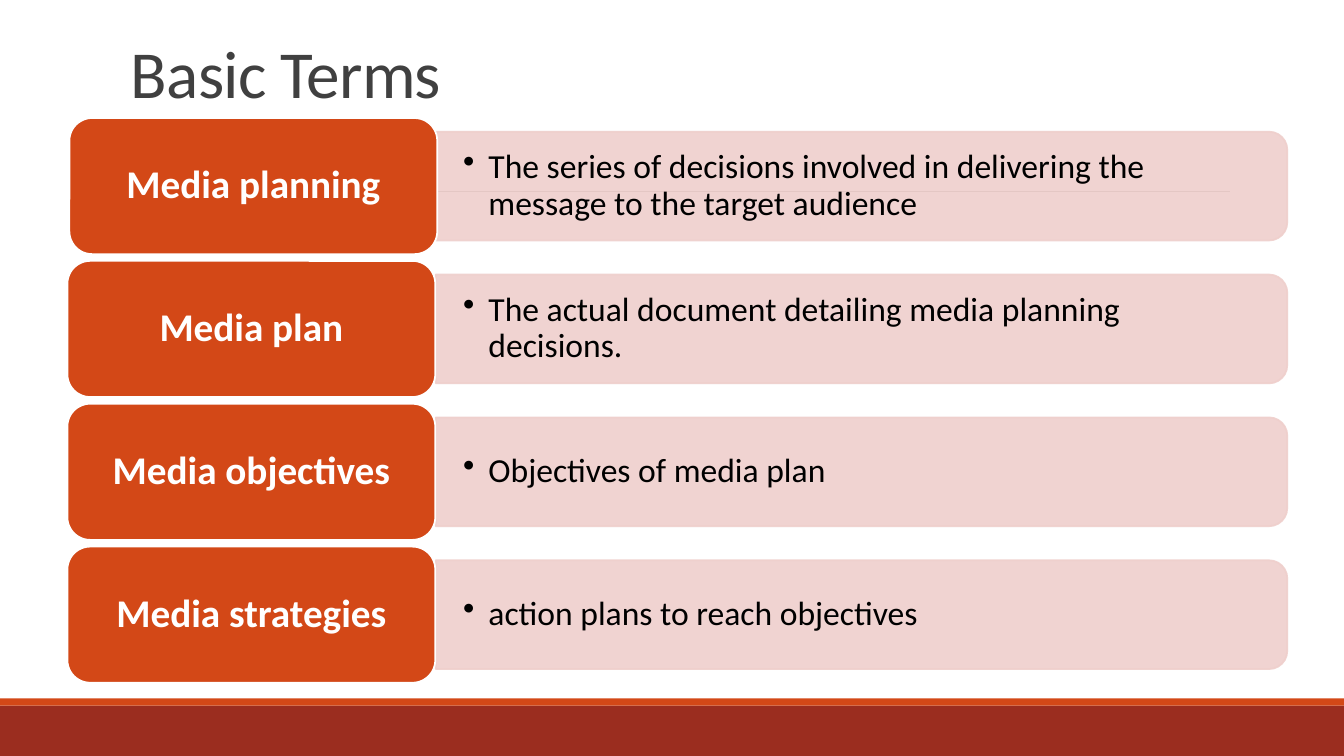
from pptx import Presentation
from pptx.dml.color import RGBColor
from pptx.enum import shapes, text
from pptx.oxml.ns import qn
from pptx.util import Cm, Pt
from lxml import etree

# Content
TITLE = "Basic Terms"
TERMS = [
    ("Media planning", "The series of decisions involved in delivering the message to the target audience"),
    ("Media plan", "The actual document detailing media planning decisions."),
    ("Media objectives", "Objectives of media plan"),
    ("Media strategies", "action plans to reach objectives"),
]

# Style
FONT = "Calibri"
WHITE = RGBColor(0xFF, 0xFF, 0xFF)
BLACK = RGBColor(0, 0, 0)
GREY = RGBColor(0x80, 0x80, 0x80)
DARK_GREY = RGBColor(0x40, 0x40, 0x40)
ORANGE = RGBColor(0xD3, 0x48, 0x17)
BRICK = RGBColor(0x9B, 0x2D, 0x1F)
PINK = RGBColor(0xEF, 0xCF, 0xCC)

# Layout in centimetres
SLIDE_W, SLIDE_H = 33.87, 19.05
FIRST_MIDDLE, PITCH = 4.69, 3.6
LABEL_LEFT, LABEL_W, LABEL_H = 1.7, 9.27, 3.43
FIRST_LABEL_SHIFT = 0.05
BAR_LEFT, BAR_W, BAR_H = 10.98, 21.46, 2.74
MEANING_W, MEANING_H = 21.34, 2.46


def add_block(slide, preset, left, top, width, height, fill, line=None):
    block = slide.shapes.add_shape(preset, Cm(left), Cm(top), Cm(width), Cm(height))
    block.shadow.inherit = False
    block.fill.solid()
    block.fill.fore_color.rgb = fill
    if line is None:
        block.line.fill.background()
    else:
        block.line.color.rgb = line
        block.line.width = Pt(1.25)
    return block


def write(shape, words, size, color, spacing, anchor, margins=(0.25, 0.13), bold=False):
    frame = shape.text_frame
    frame.word_wrap = True
    frame.vertical_anchor = anchor
    frame.margin_left = frame.margin_right = Cm(margins[0])
    frame.margin_top = frame.margin_bottom = Cm(margins[1])
    paragraph = frame.paragraphs[0]
    paragraph.text = words
    paragraph.line_spacing = spacing
    font = paragraph.font
    font.name, font.size, font.bold = FONT, Pt(size), bold
    font.color.rgb = color
    return paragraph


def add_bullet(paragraph):
    props = paragraph._p.get_or_add_pPr()
    props.set("marL", str(Cm(0.64)))
    props.set("indent", str(-Cm(0.64)))
    bullet = etree.Element(qn("a:buChar"), char="•")
    props.find(qn("a:defRPr")).addprevious(bullet)


def make_translucent(bar):
    for color in bar._element.spPr.iter(qn("a:srgbClr")):
        etree.SubElement(color, qn("a:alpha"), val="90000")


def add_term(slide, row, term, meaning):
    middle = FIRST_MIDDLE + row * PITCH

    # Bar turned a quarter so that its rounded end faces right
    bar = add_block(slide, shapes.MSO_SHAPE.ROUND_2_SAME_RECTANGLE,
                    BAR_LEFT + (BAR_W - BAR_H) / 2, middle - BAR_W / 2,
                    BAR_H, BAR_W, PINK, PINK)
    bar.rotation = 90
    make_translucent(bar)

    definition = slide.shapes.add_textbox(Cm(BAR_LEFT), Cm(middle - MEANING_H / 2),
                                          Cm(MEANING_W), Cm(MEANING_H))
    add_bullet(write(definition, meaning, 24, BLACK, 0.9,
                     text.MSO_ANCHOR.MIDDLE, (0.69, 0.36)))

    left = LABEL_LEFT + (FIRST_LABEL_SHIFT if row == 0 else 0)
    label = add_block(slide, shapes.MSO_SHAPE.ROUNDED_RECTANGLE, left,
                      middle - LABEL_H / 2, LABEL_W, LABEL_H, ORANGE, WHITE)
    name = write(label, term, 28, WHITE, 0.9, text.MSO_ANCHOR.MIDDLE, (0.3, 0.15), True)
    name.alignment = text.PP_ALIGN.CENTER


def main():
    deck = Presentation()
    deck.slide_width, deck.slide_height = Cm(SLIDE_W), Cm(SLIDE_H)
    slide = deck.slides.add_slide(deck.slide_layouts[6])

    # Footer bands and rule
    rectangle = shapes.MSO_SHAPE.RECTANGLE
    add_block(slide, rectangle, 0, 17.78, SLIDE_W, 1.27, BRICK)
    add_block(slide, rectangle, 0, 17.6, SLIDE_W, 0.18, ORANGE)
    rule = slide.shapes.add_connector(shapes.MSO_CONNECTOR.STRAIGHT,
                                      Cm(3.33), Cm(4.83), Cm(31), Cm(4.83))
    rule.line.color.rgb = GREY
    rule.line.width = Pt(0.5)
    etree.SubElement(rule._element.spPr, qn("a:effectLst"))

    # Title
    title = slide.shapes.add_textbox(Cm(3.05), Cm(0.79), Cm(27.94), Cm(2.18))
    heading = write(title, TITLE, 48, DARK_GREY, 0.85, text.MSO_ANCHOR.BOTTOM)
    heading.runs[0]._r.get_or_add_rPr().set("spc", "-50")

    # Terms and their meanings
    for row, (term, meaning) in enumerate(TERMS):
        add_term(slide, row, term, meaning)

    deck.save("out.pptx")


if __name__ == "__main__":
    main()
